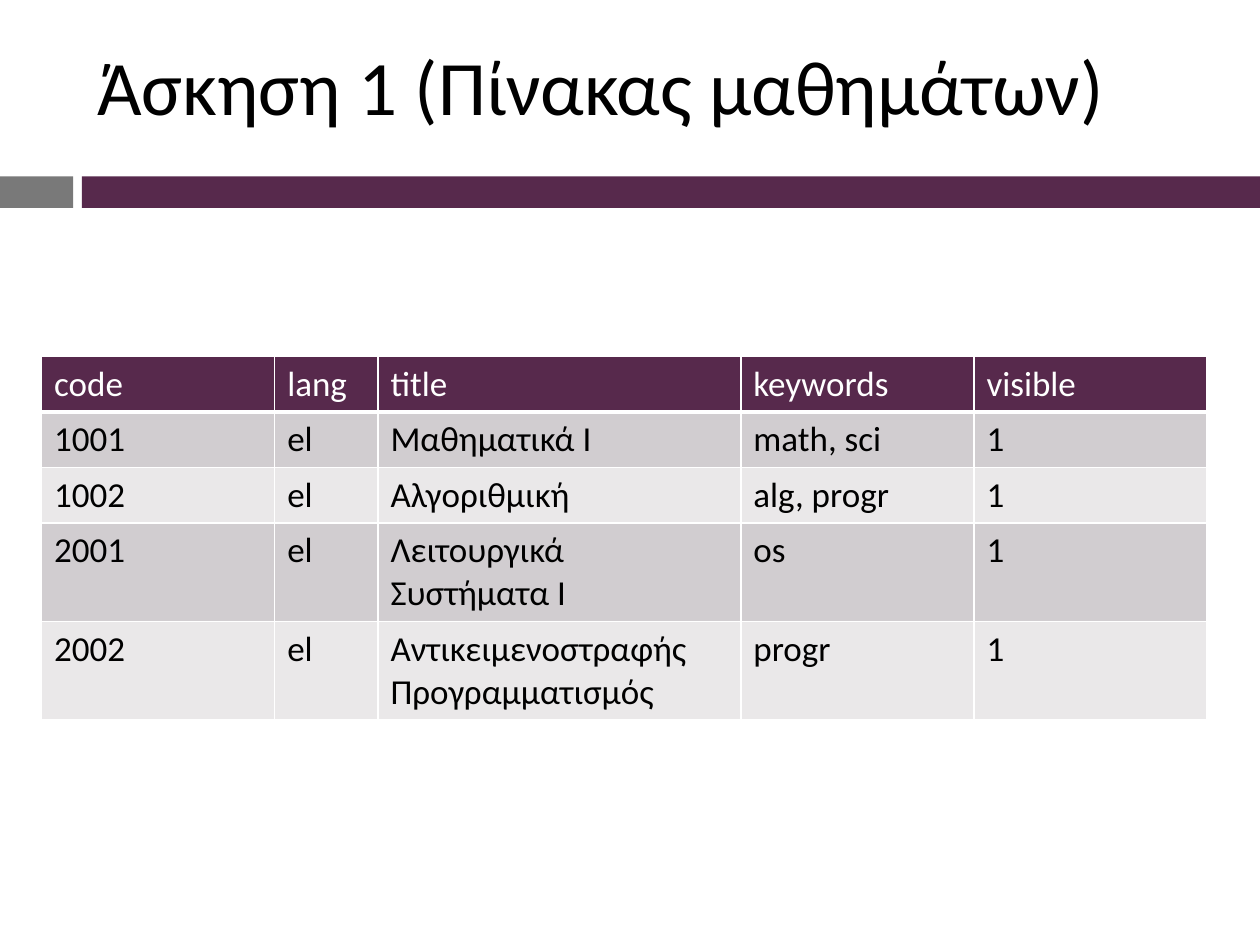
import pptx
import pptx.dml.color
import pptx.enum.shapes
import pptx.enum.text
import pptx.oxml
import pptx.oxml.ns
import pptx.util
from pptx.util import Inches

FONT = "Calibri"
PLUM = "57294C"
GRAY = "797979"
WHITE = "FFFFFF"
BLACK = "000000"
BAND_COLORS = ("D1CDD0", "EAE8E9")

COLUMN_WIDTHS = (1.85, 0.82, 2.88, 1.85, 1.85)
ROW_HEIGHT = 0.41
COURSES = (
    ("code", "lang", "title", "keywords", "visible"),
    ("1001", "el", "Μαθηματικά I", "math, sci", "1"),
    ("1002", "el", "Αλγοριθμική", "alg, progr", "1"),
    ("2001", "el", "Λειτουργικά Συστήματα I", "os", "1"),
    ("2002", "el", "Αντικειμενοστραφής Προγραμματισμός", "progr", "1"),
)


def rgb(color):
    return pptx.dml.color.RGBColor.from_string(color)


def fill_solid(fill, color):
    fill.solid()
    fill.fore_color.rgb = rgb(color)


def format_text(paragraph, size, color):
    paragraph.font.name = FONT
    paragraph.font.size = pptx.util.Pt(size)
    paragraph.font.color.rgb = rgb(color)


def add_title(slide, text):
    title = slide.shapes.title
    title.left, title.top = Inches(0.67), Inches(0.13)
    title.width, title.height = Inches(8.92), Inches(1.08)
    frame = title.text_frame
    frame.text = text
    frame.word_wrap = True
    frame.vertical_anchor = pptx.enum.text.MSO_ANCHOR.MIDDLE
    frame.paragraphs[0].alignment = pptx.enum.text.PP_ALIGN.LEFT
    format_text(frame.paragraphs[0], 44, BLACK)


def add_bar(slide, left, width, color):
    bar = slide.shapes.add_shape(
        pptx.enum.shapes.MSO_SHAPE.RECTANGLE,
        Inches(left), Inches(1.4), Inches(width), Inches(0.25),
    )
    bar.shadow.inherit = False
    fill_solid(bar.fill, color)
    bar.line.fill.background()


def add_borders(cell, bottom_width):
    properties = cell._tc.get_or_add_tcPr()
    for side, width in (("L", 1), ("R", 1), ("T", 1), ("B", bottom_width)):
        properties.append(pptx.oxml.parse_xml(
            f'<a:ln{side} {pptx.oxml.ns.nsdecls("a")} w="{pptx.util.Pt(width)}">'
            f'<a:solidFill><a:srgbClr val="{WHITE}"/></a:solidFill></a:ln{side}>'
        ))


def format_cell(cell, text, row_index):
    is_header = row_index == 0
    cell.text = text
    format_text(cell.text_frame.paragraphs[0], 20, WHITE if is_header else BLACK)
    cell.text_frame.paragraphs[0].font.bold = False
    add_borders(cell, 3 if is_header else 1)
    fill_solid(cell.fill, PLUM if is_header else BAND_COLORS[(row_index - 1) % 2])


def add_course_table(slide):
    table = slide.shapes.add_table(
        len(COURSES), len(COLUMN_WIDTHS), Inches(0.33), Inches(2.83),
        Inches(sum(COLUMN_WIDTHS)), Inches(ROW_HEIGHT * len(COURSES)),
    ).table
    for column, width in zip(table.columns, COLUMN_WIDTHS):
        column.width = Inches(width)
    for row_index, course in enumerate(COURSES):
        table.rows[row_index].height = Inches(ROW_HEIGHT)
        for column_index, text in enumerate(course):
            format_cell(table.cell(row_index, column_index), text, row_index)


def main():
    presentation = pptx.Presentation()
    presentation.slide_width = Inches(10)
    presentation.slide_height = Inches(7.5)
    slide = presentation.slides.add_slide(presentation.slide_layouts[5])
    add_bar(slide, 0, 0.58, GRAY)
    add_bar(slide, 0.65, 9.35, PLUM)
    add_title(slide, "Άσκηση 1 (Πίνακας μαθημάτων)")
    add_course_table(slide)
    presentation.save("out.pptx")


if __name__ == "__main__":
    main()
